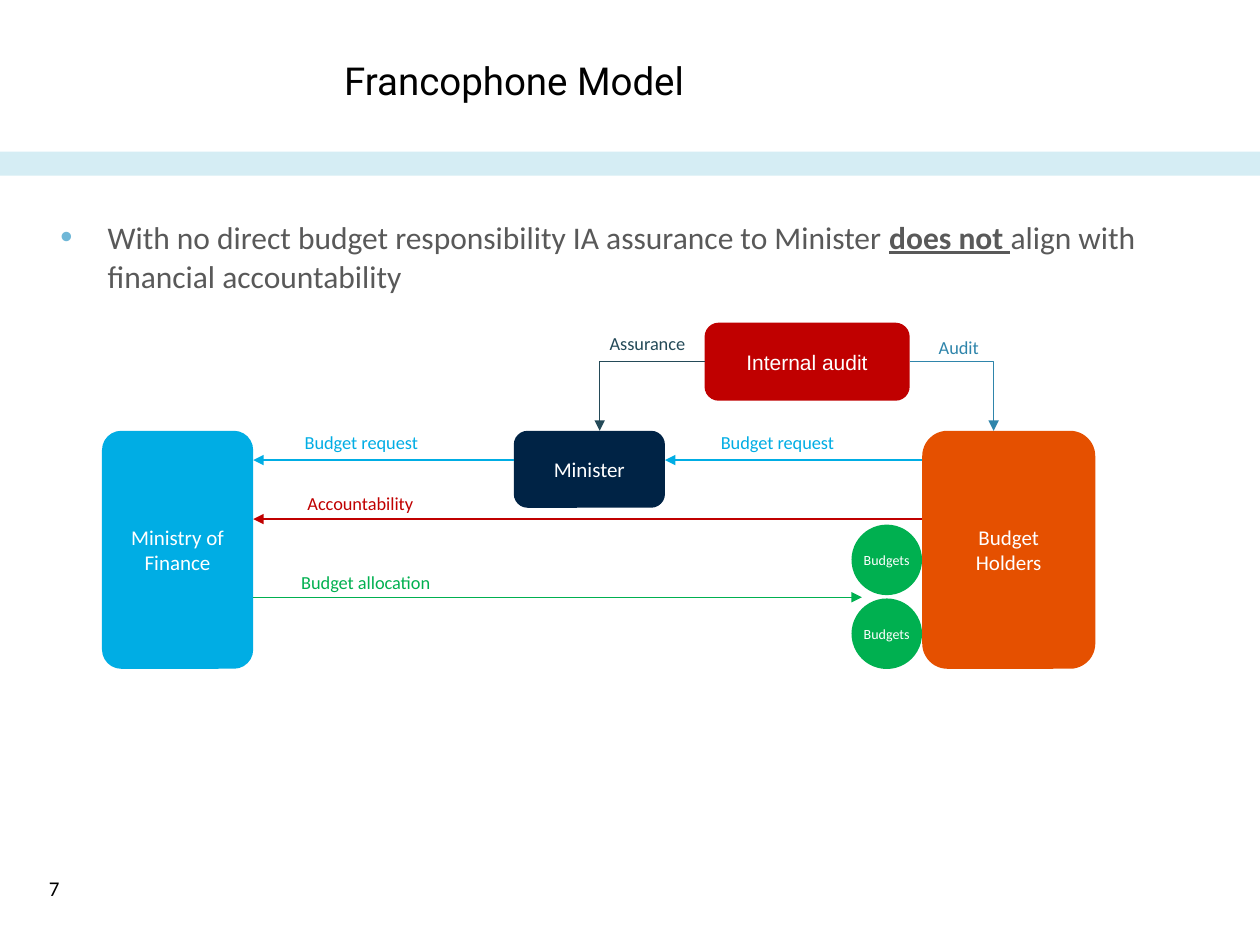
from dataclasses import dataclass

import lxml.etree
import pptx
import pptx.dml.color
import pptx.enum.shapes
import pptx.enum.text
import pptx.oxml.ns
import pptx.util

Pt = pptx.util.Pt
RGBColor = pptx.dml.color.RGBColor
Preset = pptx.enum.shapes.MSO_SHAPE
Route = pptx.enum.shapes.MSO_CONNECTOR
Align = pptx.enum.text.PP_ALIGN
Anchor = pptx.enum.text.MSO_ANCHOR
qn = pptx.oxml.ns.qn

BLACK = RGBColor(0x00, 0x00, 0x00)
WHITE = RGBColor(0xFF, 0xFF, 0xFF)
GREY = RGBColor(0x59, 0x59, 0x59)
PALE_BLUE = RGBColor(0xD5, 0xED, 0xF4)
ORANGE = RGBColor(0xE5, 0x50, 0x00)
NAVY = RGBColor(0x00, 0x23, 0x45)
CYAN = RGBColor(0x00, 0xAD, 0xE4)
GREEN = RGBColor(0x00, 0xB0, 0x50)
RED = RGBColor(0xC0, 0x00, 0x00)
SLATE = RGBColor(0x24, 0x4A, 0x58)
STEEL = RGBColor(0x2F, 0x85, 0xAB)
BULLET_BLUE = "6FB7D7"


@dataclass
class Node:
    text: str
    left: float
    top: float
    width: float
    height: float
    fill: RGBColor
    preset: Preset = Preset.ROUNDED_RECTANGLE
    radius: float | None = None
    size: float = 12
    font: str = "Calibri"
    inset: float = 2.9

    @property
    def right(self) -> float:
        return self.left + self.width

    @property
    def middle(self) -> float:
        return self.top + self.height / 2


@dataclass
class Label:
    text: str
    left: float
    top: float
    width: float
    height: float
    color: RGBColor
    size: float = 10.5
    font: str = "Calibri"
    anchor: Anchor = Anchor.MIDDLE
    align: Align = Align.LEFT
    insets: tuple[float, float] = (2.9, 2.9)


@dataclass
class Flow:
    start: tuple[float, float]
    end: tuple[float, float]
    color: RGBColor


def set_insets(frame, horizontal: float, vertical: float) -> None:
    frame.margin_left = frame.margin_right = Pt(horizontal)
    frame.margin_top = frame.margin_bottom = Pt(vertical)


def style_paragraph(paragraph, size: float, font: str, color: RGBColor, align: Align) -> None:
    paragraph.font.size = Pt(size)
    paragraph.font.name = font
    paragraph.font.color.rgb = color
    paragraph.alignment = align


def draw_node(slide, node: Node) -> None:
    shape = slide.shapes.add_shape(
        node.preset, Pt(node.left), Pt(node.top), Pt(node.width), Pt(node.height)
    )
    shape.shadow.inherit = False
    shape.fill.solid()
    shape.fill.fore_color.rgb = node.fill
    shape.line.fill.background()
    if node.radius is not None:
        shape.adjustments[0] = node.radius
    frame = shape.text_frame
    frame.word_wrap = True
    frame.vertical_anchor = Anchor.MIDDLE
    set_insets(frame, node.inset, node.inset)
    frame.text = node.text
    for paragraph in frame.paragraphs:
        style_paragraph(paragraph, node.size, node.font, WHITE, Align.CENTER)


def draw_label(slide, label: Label):
    box = slide.shapes.add_textbox(
        Pt(label.left), Pt(label.top), Pt(label.width), Pt(label.height)
    )
    frame = box.text_frame
    frame.word_wrap = True
    frame.vertical_anchor = label.anchor
    set_insets(frame, *label.insets)
    frame.text = label.text
    paragraph = frame.paragraphs[0]
    style_paragraph(paragraph, label.size, label.font, label.color, label.align)
    return paragraph


def draw_flow(slide, flow: Flow) -> None:
    bent = flow.start[1] != flow.end[1]
    route = Route.ELBOW if bent else Route.STRAIGHT
    connector = slide.shapes.add_connector(route, *map(Pt, flow.start + flow.end))
    connector.line.color.rgb = flow.color
    connector.line.width = Pt(0.75)
    properties = connector._element.spPr
    if bent:
        properties.find(qn("a:prstGeom")).set("prst", "bentConnector2")
    lxml.etree.SubElement(properties.find(qn("a:ln")), qn("a:tailEnd"), type="triangle")
    lxml.etree.SubElement(properties, qn("a:effectLst"))


def draw_statement(slide) -> None:
    statement = draw_label(slide, Label(
        "With no direct budget responsibility IA assurance to Minister ",
        27.4, 120.2, 667.4, 53.3, GREY, 18, anchor=Anchor.TOP, insets=(7.2, 3.6),
    ))
    statement.line_spacing = 1.04
    emphasis = statement.add_run()
    emphasis.text = "does not "
    emphasis.font.bold = emphasis.font.underline = True
    statement.add_run().text = "align with financial accountability"
    properties = statement._p.get_or_add_pPr()
    properties.set("marL", str(Pt(27)))
    properties.set("indent", str(Pt(-27)))
    bullet_color = lxml.etree.Element(qn("a:buClr"))
    lxml.etree.SubElement(bullet_color, qn("a:srgbClr"), val=BULLET_BLUE)
    bullet_size = lxml.etree.Element(qn("a:buSzPct"), val="110000")
    bullet_font = lxml.etree.Element(qn("a:buFont"), typeface="Arial")
    bullet = lxml.etree.Element(qn("a:buChar"), char="•")
    for element in (bullet_color, bullet_size, bullet_font, bullet):
        properties.find(qn("a:defRPr")).addprevious(element)


def main() -> None:
    deck = pptx.Presentation()
    deck.slide_width, deck.slide_height = Pt(720), Pt(540)
    slide = deck.slides.add_slide(deck.slide_layouts[6])

    row_top = 246.2
    band = Node("", 0, 86.7, 720, 13.7, PALE_BLUE, Preset.RECTANGLE)
    holders = Node("Budget\nHolders", 527, row_top, 98.9, 136, ORANGE, radius=0.146)
    minister = Node("Minister", 293.6, row_top, 86.4, 44, NAVY, radius=0.18)
    ministry = Node("Ministry of Finance", 58.3, row_top, 86.4, 136, CYAN, radius=0.127)
    audit = Node("Internal audit", 402.6, 184.4, 117.2, 44.6, RED, radius=0.181, font="Arial")
    budgets = [
        Node("Budgets", 486.6, top, 40.3, 40.3, GREEN, Preset.OVAL, size=8, inset=0)
        for top in (299.8, 342)
    ]
    for node in (band, holders, minister, ministry, *budgets, audit):
        draw_node(slide, node)

    request, accountability, allocation = 262.9, 296.6, 341.3
    for flow in (
        Flow((holders.left, request), (minister.right, request), CYAN),
        Flow((minister.left, request), (ministry.right, request), CYAN),
        Flow((holders.left, accountability), (ministry.right, accountability), RED),
        Flow((ministry.right, allocation), (492.5, allocation), GREEN),
        Flow((audit.left, audit.middle), (342.7, row_top), SLATE),
        Flow((audit.right, audit.middle), (567.8, row_top), STEEL),
    ):
        draw_flow(slide, flow)

    for label in (
        Label("Francophone Model", 28.1, 15.8, 531.4, 59.8, BLACK, 22, "Roboto",
              align=Align.CENTER, insets=(7.2, 3.6)),
        Label("7", 20.9, 496.8, 56.2, 21.6, BLACK, 12, anchor=Anchor.TOP, insets=(7.2, 3.6)),
        Label("Budget request", 409, 239.2, 110.9, 27.4, CYAN),
        Label("Budget request", 171.2, 239.2, 110.9, 27.4, CYAN),
        Label("Accountability", 172.8, 273.9, 108.7, 27.4, RED),
        Label("Budget allocation", 169.2, 319.2, 185.8, 27.4, GREEN),
        Label("Assurance", 341.3, 186.5, 91.4, 31.7, SLATE, anchor=Anchor.TOP, insets=(7.2, 3.6)),
        Label("Audit", 533.5, 184.4, 43.9, 28.1, STEEL),
    ):
        draw_label(slide, label)
    draw_statement(slide)

    deck.save("out.pptx")


if __name__ == "__main__":
    main()
